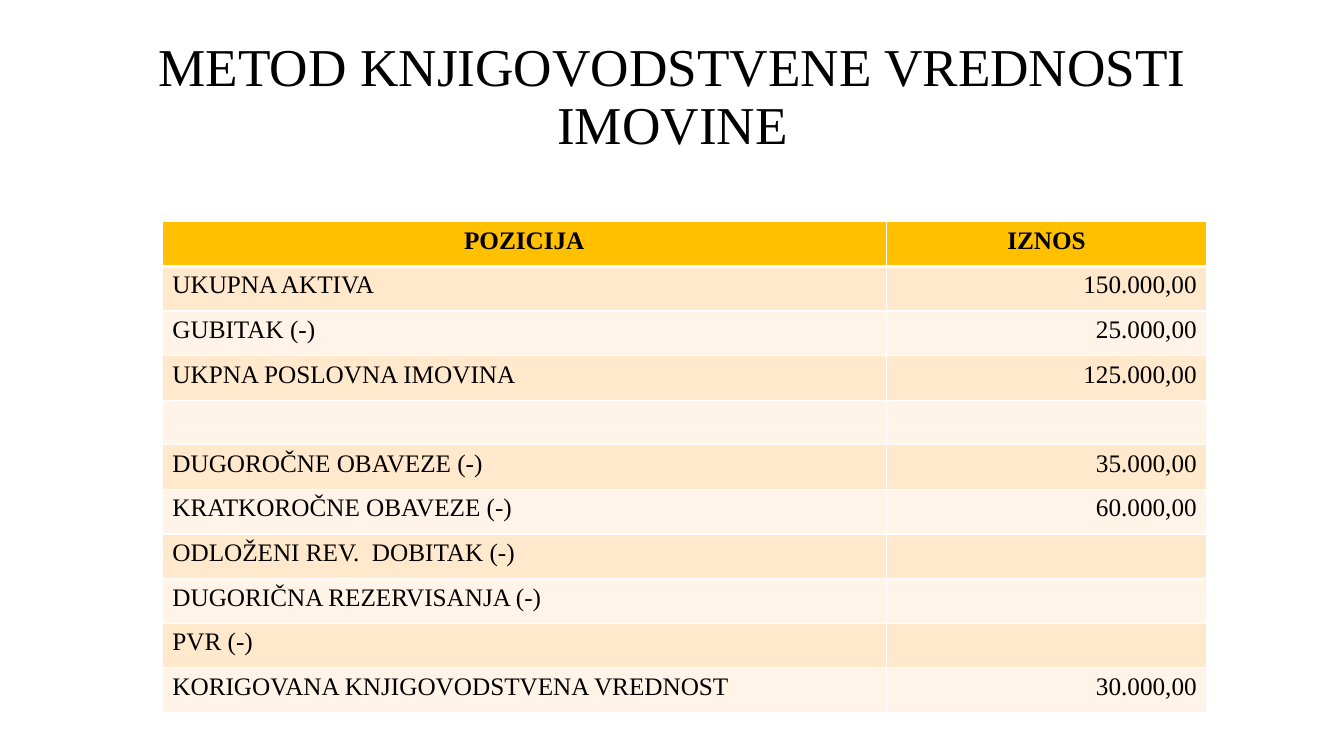
from lxml import etree
from pptx import Presentation
from pptx.dml.color import RGBColor
from pptx.enum import text
from pptx.oxml import ns
from pptx.util import Inches, Pt

# Content
TITLE = "METOD KNJIGOVODSTVENE VREDNOSTI IMOVINE"
ROWS = [
    ("POZICIJA", "IZNOS"),
    ("UKUPNA AKTIVA", "150.000,00"),
    ("GUBITAK (-)", "25.000,00"),
    ("UKPNA POSLOVNA IMOVINA", "125.000,00"),
    ("", ""),
    ("DUGOROČNE OBAVEZE (-)", "35.000,00"),
    ("KRATKOROČNE OBAVEZE (-)", "60.000,00"),
    ("ODLOŽENI REV.  DOBITAK (-)", ""),
    ("DUGORIČNA REZERVISANJA (-)", ""),
    ("PVR (-)", ""),
    ("KORIGOVANA KNJIGOVODSTVENA VREDNOST", "30.000,00"),
]

# Style
FONT = "Times New Roman"
BLACK, WHITE = "000000", "FFFFFF"
HEADER_FILL = "FFC000"
BAND_FILLS = ("FFF4E7", "FFE8CC")
COLUMN_WIDTHS = (7.18, 3.18)
TABLE_HEIGHT = 4.87
ALIGN = text.PP_ALIGN
COLUMN_ALIGNMENTS = (ALIGN.LEFT, ALIGN.RIGHT)


def color(hex_value):
    return RGBColor.from_string(hex_value)


def style_paragraph(paragraph, size, alignment, bold=False):
    paragraph.alignment = alignment
    font = paragraph.font
    font.name, font.size, font.bold = FONT, Pt(size), bold
    font.color.rgb = color(BLACK)
    for run in paragraph.runs:
        run.font.name, run.font.size, run.font.bold = FONT, Pt(size), bold
        run.font.color.rgb = color(BLACK)


def add_borders(cell, bottom_width, top_width):
    properties = cell._tc.get_or_add_tcPr()
    widths = {"a:lnL": 1, "a:lnR": 1, "a:lnT": top_width, "a:lnB": bottom_width}
    for position, (side, width) in enumerate(widths.items()):
        line = etree.Element(ns.qn(side), w=str(Pt(width)))
        fill = etree.SubElement(line, ns.qn("a:solidFill"))
        etree.SubElement(fill, ns.qn("a:srgbClr"), val=WHITE)
        properties.insert(position, line)


presentation = Presentation()
presentation.slide_width, presentation.slide_height = Inches(13.33), Inches(7.5)
slide = presentation.slides.add_slide(presentation.slide_layouts[6])

# Title
title = slide.shapes.add_textbox(Inches(0.46), Inches(0.25), Inches(12.42), Inches(1.45))
title_frame = title.text_frame
title_frame.word_wrap = True
title_frame.vertical_anchor = text.MSO_ANCHOR.MIDDLE
title_frame.text = TITLE
title_frame.paragraphs[0].line_spacing = 0.9
style_paragraph(title_frame.paragraphs[0], 38, ALIGN.CENTER)

# Table
table = slide.shapes.add_table(
    len(ROWS), len(COLUMN_WIDTHS), Inches(1.61), Inches(2.2),
    Inches(sum(COLUMN_WIDTHS)), Inches(TABLE_HEIGHT)).table
for column, width in zip(table.columns, COLUMN_WIDTHS):
    column.width = Inches(width)

for row_index, values in enumerate(ROWS):
    is_header = row_index == 0
    table.rows[row_index].height = Inches(TABLE_HEIGHT / len(ROWS))
    for column_index, value in enumerate(values):
        cell = table.cell(row_index, column_index)
        cell.text_frame.text = value
        alignment = ALIGN.CENTER if is_header else COLUMN_ALIGNMENTS[column_index]
        style_paragraph(cell.text_frame.paragraphs[0], 18, alignment, is_header)
        cell.fill.solid()
        cell.fill.fore_color.rgb = color(HEADER_FILL if is_header else BAND_FILLS[row_index % 2])
        add_borders(cell, bottom_width=3 if is_header else 1,
                    top_width=3 if row_index == 1 else 1)

presentation.save("out.pptx")
